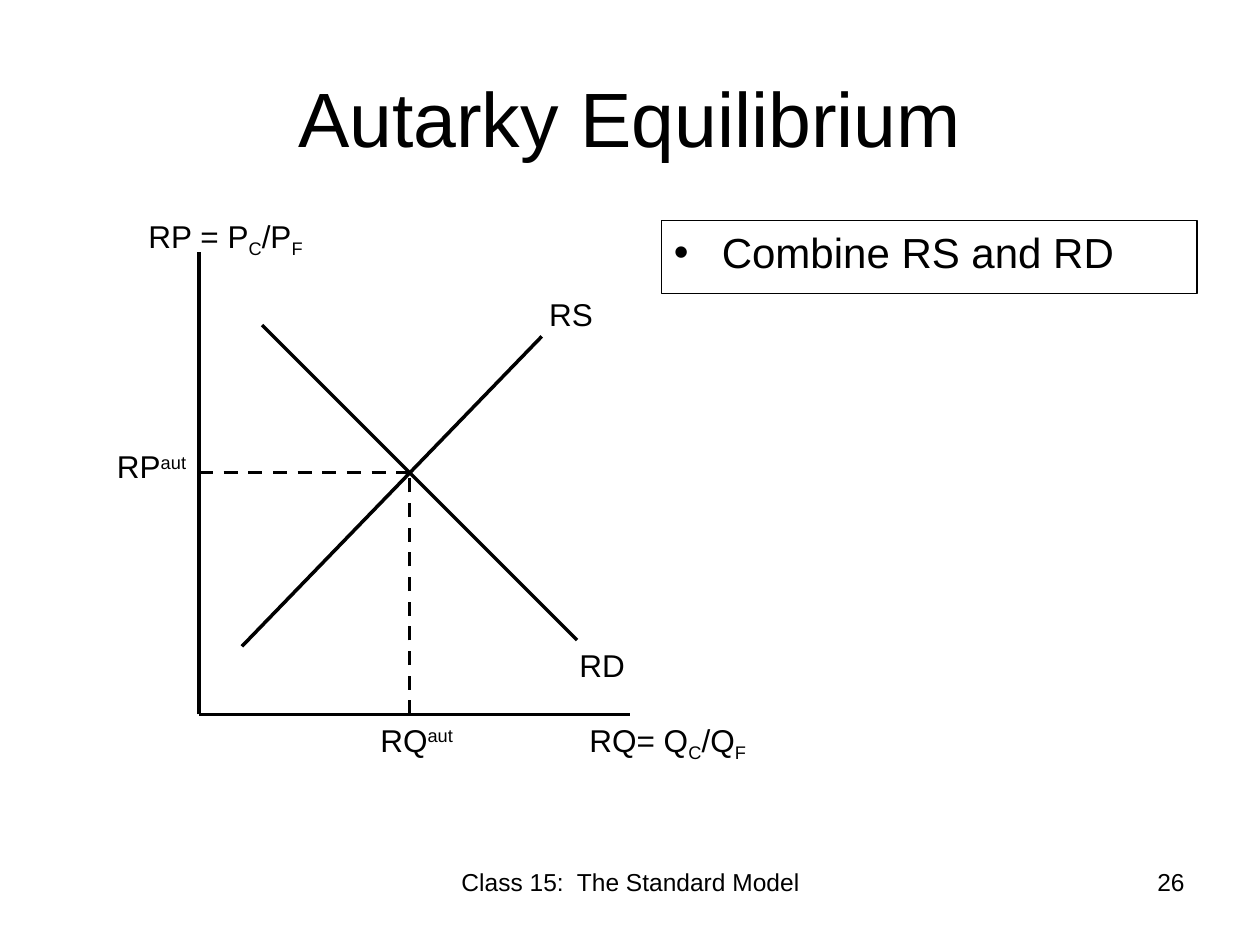
"""Build the Autarky Equilibrium slide with its relative supply and demand diagram."""
from lxml import etree
from pptx import Presentation
from pptx import util as u
from pptx.dml.color import RGBColor
from pptx.enum import dml, shapes, text
from pptx.oxml import ns

BLACK = RGBColor(0, 0, 0)
FONT = "Arial"
SUB, SUP = -25000, 30000
LEFT, CENTER, RIGHT = text.PP_ALIGN.LEFT, text.PP_ALIGN.CENTER, text.PP_ALIGN.RIGHT
TOP, MIDDLE = text.MSO_ANCHOR.TOP, text.MSO_ANCHOR.MIDDLE

ORIGIN = (1.58, 5.67)
EQUILIBRIUM = (3.25, 3.75)

CURVES = [
    (ORIGIN, (5, ORIGIN[1])),
    (ORIGIN, (ORIGIN[0], 2)),
    ((2.08, 2.58), (4.58, 5.08)),
    ((1.92, 5.13), (4.3, 2.67)),
]
GUIDES = [
    ((ORIGIN[0], EQUILIBRIUM[1]), EQUILIBRIUM),
    ((EQUILIBRIUM[0], ORIGIN[1]), EQUILIBRIUM),
]
LABELS = [
    ((4.5, 5.08, 0.57, 0.4), [("RD", 0)]),
    ((4.26, 2.29, 0.55, 0.4), [("RS", 0)]),
    ((4.58, 5.67, 1.75, 0.4), [("RQ= Q", 0), ("C", SUB), ("/Q", 0), ("F", SUB)]),
    ((1.08, 1.67, 1.51, 0.4), [("RP = P", 0), ("C", SUB), ("/P", 0), ("F", SUB)]),
    ((0.83, 3.5, 1.51, 0.4), [("RP", 0), ("aut", SUP)]),
    ((2.92, 5.67, 1.08, 0.4), [("RQ", 0), ("aut", SUP)]),
]
TITLE = ((0.5, 0.3, 9, 1.25), [("Autarky Equilibrium", 0)])
POINT = ((5.25, 1.75, 4.25, 0.58), [("Combine RS and RD", 0)])
FOOTER = ((3.42, 6.83, 3.17, 0.52), [("Class 15:  The Standard Model", 0)])
PAGE = ((7.17, 6.83, 2.33, 0.52), [("26", 0)])


def add_text(slide, box, runs, size=18, align=LEFT, anchor=TOP):
    area = slide.shapes.add_textbox(*map(u.Inches, box))
    frame = area.text_frame
    frame.word_wrap = True
    frame.vertical_anchor = anchor
    paragraph = frame.paragraphs[0]
    paragraph.alignment = align
    for words, baseline in runs:
        run = paragraph.add_run()
        run.text = words
        run.font.name, run.font.size = FONT, u.Pt(size)
        run.font.color.rgb = BLACK
        if baseline:
            run._r.get_or_add_rPr().set("baseline", str(baseline))
    return area


def add_line(slide, start, end, dashed=False):
    line = slide.shapes.add_connector(
        shapes.MSO_CONNECTOR.STRAIGHT, *map(u.Inches, start + end))
    line.line.color.rgb = BLACK
    line.line.width = u.Pt(2)
    if dashed:
        line.line.dash_style = dml.MSO_LINE.DASH
    etree.SubElement(line._element.spPr, ns.qn("a:effectLst"))


def add_point(slide, box, runs):
    point = add_text(slide, box, runs, 24)
    point.line.color.rgb = BLACK
    point.line.width = u.Pt(0.75)
    paragraph = point.text_frame.paragraphs[0]
    paragraph.space_before = u.Pt(3)
    properties = paragraph._p.get_or_add_pPr()
    indent = u.Inches(0.38)
    properties.set("marL", str(indent))
    properties.set("indent", str(-indent))
    etree.SubElement(properties, ns.qn("a:buFont")).set("typeface", FONT)
    etree.SubElement(properties, ns.qn("a:buChar")).set("char", "•")


def main():
    deck = Presentation()
    deck.slide_width, deck.slide_height = u.Inches(10), u.Inches(7.5)
    slide = deck.slides.add_slide(deck.slide_layouts[6])
    add_text(slide, *TITLE, size=44, align=CENTER, anchor=MIDDLE)
    add_point(slide, *POINT)
    for start, end in CURVES:
        add_line(slide, start, end)
    for start, end in GUIDES:
        add_line(slide, start, end, dashed=True)
    for box, runs in LABELS:
        add_text(slide, box, runs)
    add_text(slide, *FOOTER, size=14, align=CENTER)
    add_text(slide, *PAGE, size=14, align=RIGHT)
    deck.save("out.pptx")


if __name__ == "__main__":
    main()
